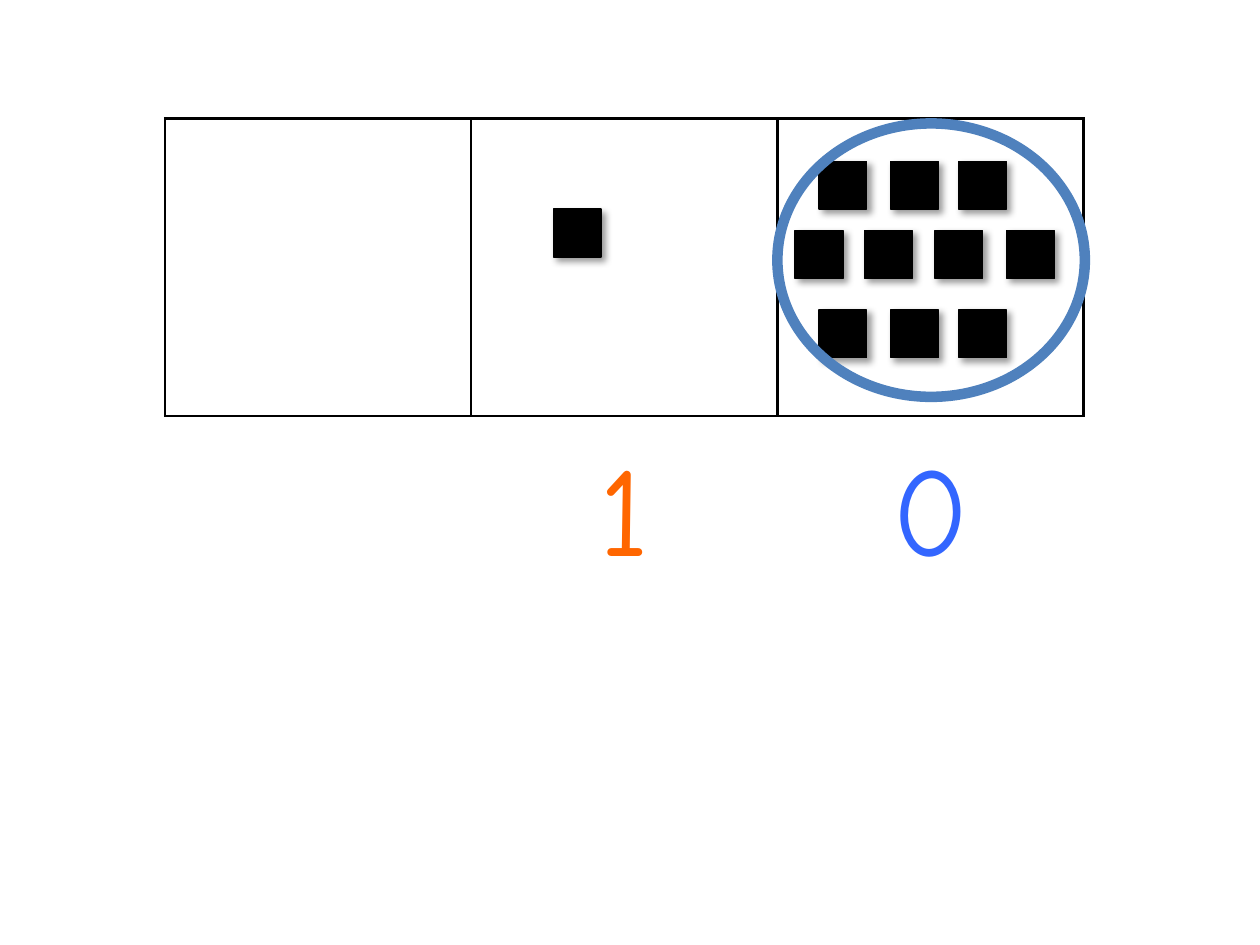
from dataclasses import dataclass

from lxml import etree
from pptx import Presentation
from pptx.dml.color import RGBColor
from pptx.enum.shapes import MSO_SHAPE
from pptx.enum.text import PP_ALIGN
from pptx.oxml.ns import qn
from pptx.util import Inches, Pt

RECTANGLE = MSO_SHAPE.RECTANGLE
OVAL = MSO_SHAPE.OVAL
CENTER = PP_ALIGN.CENTER


@dataclass(frozen=True)
class Theme:
    font: str = "Comic Neue"
    digit_size: int = 72
    ink: str = "000000"
    tens: str = "FF6600"
    ones: str = "3366FF"
    ring: str = "4F81BD"
    border_width: float = 1.5
    counter_width: float = 0.75
    ring_width: float = 6


THEME = Theme()
TABLE_LEFT, COLUMN_WIDTH, ROW_HEIGHT = 1.31, 2.43, 2.36
COUNTER_SIZE = 0.38
OUTER_ROW = (6.5, 7.07, 7.61)
MIDDLE_ROW = (6.31, 6.86, 7.42, 7.99)
ONES_ROWS = ((1.28, OUTER_ROW), (1.83, MIDDLE_ROW), (2.46, OUTER_ROW))


def add_color(parent, color):
    return etree.SubElement(parent, qn("a:srgbClr"), val=color)


def border_cell(cell):
    """Draw a solid line on all four sides of a cell."""
    properties = cell._tc.get_or_add_tcPr()
    for position, side in enumerate(("lnL", "lnR", "lnT", "lnB")):
        line = etree.Element(qn(f"a:{side}"), w=str(Pt(THEME.border_width)))
        add_color(etree.SubElement(line, qn("a:solidFill")), THEME.ink)
        properties.insert(position, line)


def add_place_table(page, top, digits=(), bordered=False):
    """Add a row of three place-value cells; digits are (column, text, color)."""
    frame = page.shapes.add_table(
        1, 3, Inches(TABLE_LEFT), Inches(top),
        Inches(3 * COLUMN_WIDTH), Inches(ROW_HEIGHT))
    table = frame.table
    table.first_row = table.horz_banding = False
    # The plain "No Style, No Grid" table style
    style = frame._element.find(".//" + qn("a:tableStyleId"))
    style.text = "{2D5ABB26-0587-4C30-8999-92F81FD0307C}"
    for cell in table.iter_cells():
        cell.fill.background()
        if bordered:
            border_cell(cell)
    for column, text, color in digits:
        para = table.cell(0, column).text_frame.paragraphs[0]
        para.alignment = CENTER
        span = para.add_run()
        span.text = text
        span.font.name = THEME.font
        span.font.size = Pt(THEME.digit_size)
        span.font.color.rgb = RGBColor.from_string(color)


def add_outlined(page, kind, left, top, width, height, color, line_width):
    shape = page.shapes.add_shape(
        kind, Inches(left), Inches(top), Inches(width), Inches(height))
    shape.shadow.inherit = False
    shape.fill.background()
    shape.line.color.rgb = RGBColor.from_string(color)
    shape.line.width = Pt(line_width)
    return shape


def add_counter(page, left, top):
    """Add a black unit square with a soft shadow to the lower right."""
    square = add_outlined(page, RECTANGLE, left, top, COUNTER_SIZE,
                          COUNTER_SIZE, THEME.ink, THEME.counter_width)
    square.fill.solid()
    square.fill.fore_color.rgb = RGBColor.from_string(THEME.ink)
    effects = square._element.spPr.find(qn("a:effectLst"))
    shadow = etree.SubElement(
        effects, qn("a:outerShdw"), blurRad=str(Pt(4)), dist=str(Pt(3)),
        dir=str(45 * 60000), algn="tl", rotWithShape="0")
    etree.SubElement(add_color(shadow, THEME.ink), qn("a:alpha"), val="40000")


def main():
    deck = Presentation()
    deck.slide_width, deck.slide_height = Inches(10), Inches(7.5)
    page = deck.slides.add_slide(deck.slide_layouts[6])

    # Place-value chart and the digits below it
    add_place_table(page, 0.94, bordered=True)
    add_place_table(page, 3.47, digits=((1, "1", THEME.tens),
                                        (2, "0", THEME.ones)))

    # Ten ones, ringed as a group
    for top, lefts in ONES_ROWS:
        for left in lefts:
            add_counter(page, left, top)
    add_outlined(page, OVAL, 6.17, 0.98, 2.44, 2.17,
                 THEME.ring, THEME.ring_width)

    # The single ten they become
    add_counter(page, 4.39, 1.66)

    deck.save("out.pptx")


if __name__ == "__main__":
    main()
